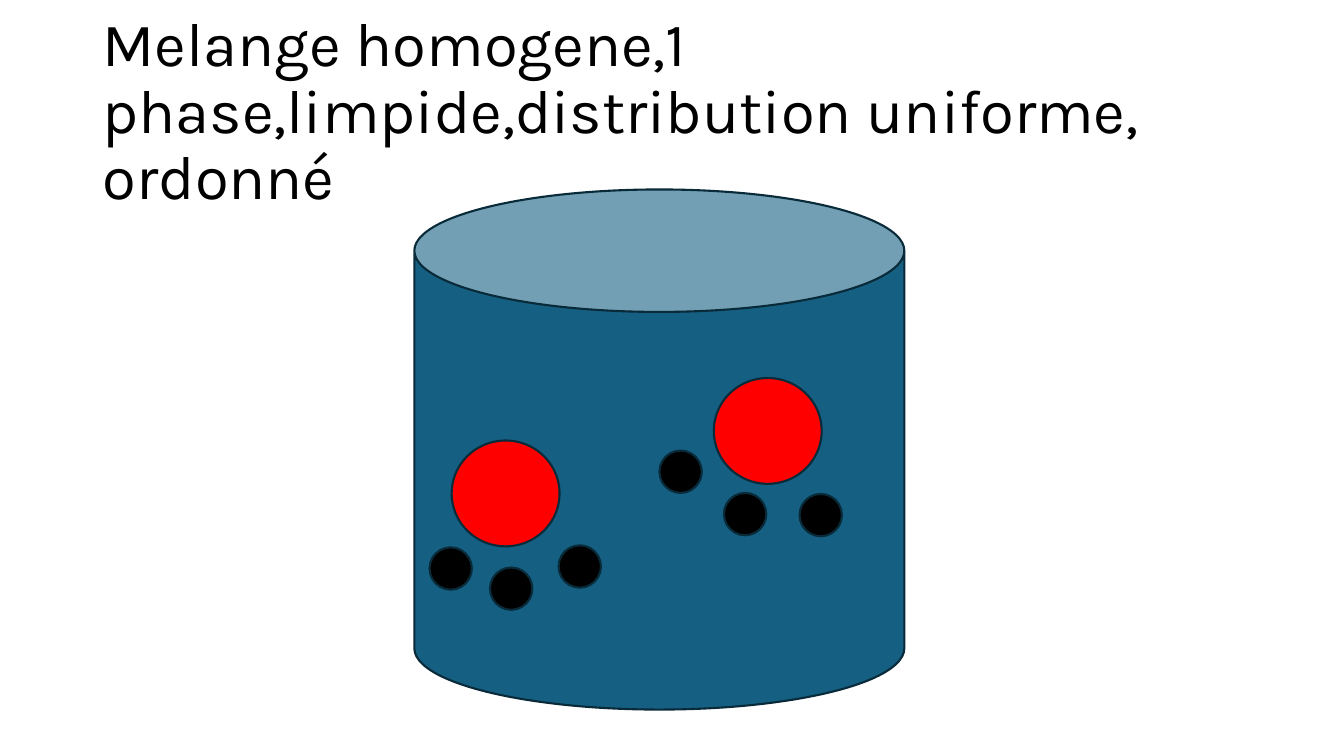
from dataclasses import dataclass

from pptx import Presentation
from pptx.dml.color import RGBColor
from pptx.enum.shapes import MSO_SHAPE
from pptx.enum.text import MSO_ANCHOR
from pptx.slide import Slide
from pptx.util import Inches, Pt

CAN = MSO_SHAPE.CAN
OVAL = MSO_SHAPE.OVAL
MIDDLE = MSO_ANCHOR.MIDDLE

TITLE = "Melange homogene,1 phase,limpide,distribution uniforme, ordonné"
FONT = "Karla"
BLACK = "000000"
RED = "FF0000"
WATER = "156082"
OUTLINE = "092A39"


@dataclass(frozen=True)
class Solid:
    kind: MSO_SHAPE
    left: float
    top: float
    width: float
    height: float
    fill: str


BEAKER = Solid(CAN, 4.11, 1.88, 4.86, 5.16, WATER)
LARGE_PARTICLES = [
    Solid(OVAL, left, top, 1.07, 1.05, RED)
    for left, top in [(4.48, 4.37), (7.08, 3.75)]
]
SMALL_PARTICLES = [
    Solid(OVAL, left, top, 0.42, 0.42, BLACK)
    for left, top in [
        (6.54, 4.47), (7.18, 4.89), (7.93, 4.9),
        (4.26, 5.43), (4.86, 5.63), (5.54, 5.41),
    ]
]


def color(value: str) -> RGBColor:
    return RGBColor.from_string(value)


def draw_solid(page: Slide, solid: Solid) -> None:
    shape = page.shapes.add_shape(
        solid.kind, Inches(solid.left), Inches(solid.top),
        Inches(solid.width), Inches(solid.height),
    )
    shape.shadow.inherit = False
    shape.fill.solid()
    shape.fill.fore_color.rgb = color(solid.fill)
    shape.line.color.rgb = color(OUTLINE)
    shape.line.width = Pt(1.5)


def draw_title(page: Slide) -> None:
    box = page.shapes.add_textbox(
        Inches(0.92), Inches(0.4), Inches(11.5), Inches(1.45)
    )
    frame = box.text_frame
    frame.word_wrap = True
    frame.vertical_anchor = MIDDLE
    para = frame.paragraphs[0]
    para.text = TITLE
    para.line_spacing = 0.9
    para.font.name = FONT
    para.font.size = Pt(44)
    para.font.color.rgb = color(BLACK)


def main() -> None:
    deck = Presentation()
    deck.slide_width = Inches(13.33)
    deck.slide_height = Inches(7.5)
    page = deck.slides.add_slide(deck.slide_layouts[6])
    draw_title(page)
    for solid in [BEAKER, *LARGE_PARTICLES, *SMALL_PARTICLES]:
        draw_solid(page, solid)
    deck.save("out.pptx")


if __name__ == "__main__":
    main()
